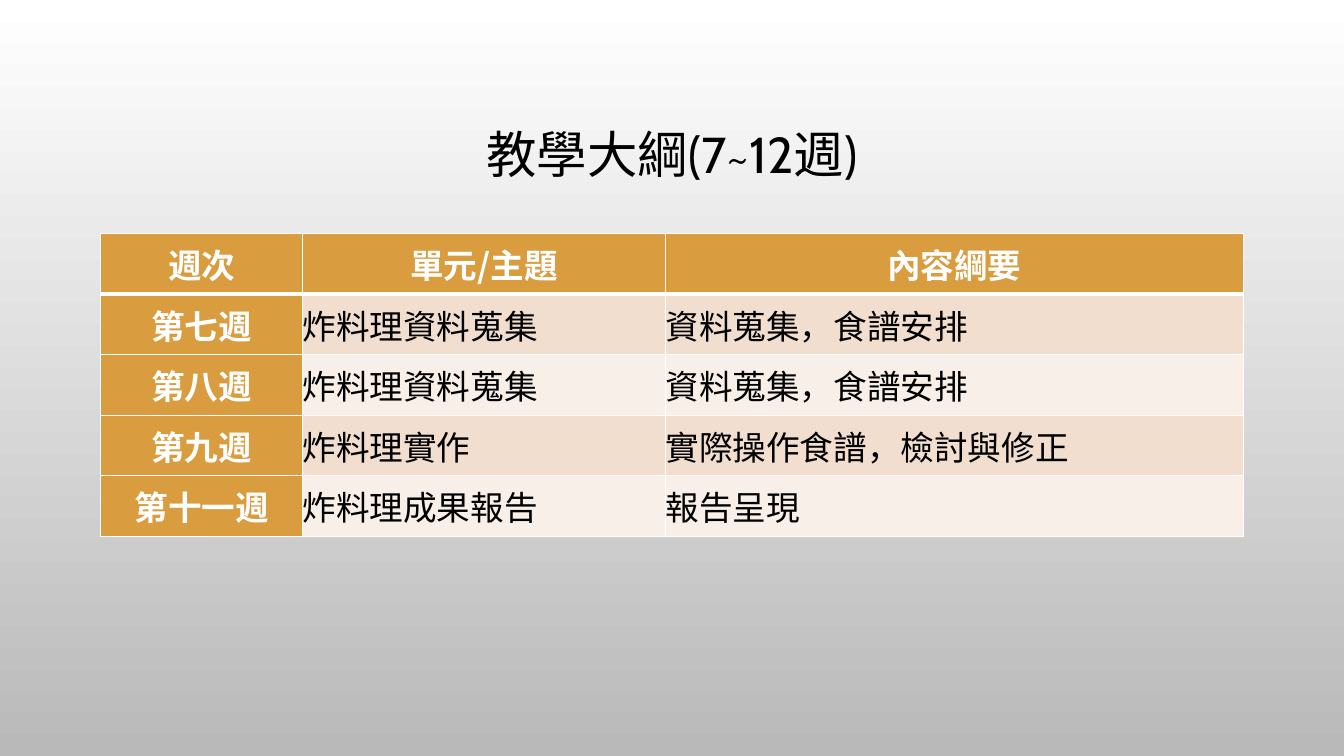
from dataclasses import dataclass

from lxml.etree import SubElement
from pptx import Presentation
from pptx.dml.color import RGBColor
from pptx.enum.text import MSO_ANCHOR as Anchor, PP_ALIGN as Align
from pptx.oxml.ns import qn
from pptx.util import Inches, Pt


@dataclass(frozen=True)
class Theme:
    title_font: str = "Cabin"
    table_font: str = "Noto Sans CJK SC"
    title_size: int = 36
    table_size: int = 24
    black: str = "000000"
    white: str = "FFFFFF"
    background_end: str = "B9B9B9"
    accent: str = "D99C3F"
    bands: tuple = ("F1DECF", "F8EFE8")
    thin_line: int = 1
    header_line: int = 3


class SlideBuilder:
    def __init__(self, deck, theme):
        self.theme = theme
        self.page = deck.slides.add_slide(deck.slide_layouts[6])

    def background(self):
        fill = self.page.background.fill
        fill.gradient()
        fill.gradient_angle = 270
        colors = (self.theme.white, self.theme.background_end)
        for stop, color in zip(fill.gradient_stops, colors):
            stop.color.rgb = RGBColor.from_string(color)

    def set_text(self, frame, text, font, size, color, bold=False, align=Align.CENTER):
        para = frame.paragraphs[0]
        para.text = text
        para.alignment = align
        para.font.size = Pt(size)
        para.font.bold = bold
        para.font.name = font
        para.font.color.rgb = RGBColor.from_string(color)
        # East Asian characters share one typeface
        defaults = para._p.pPr.find(qn("a:defRPr"))
        SubElement(defaults, qn("a:ea"), typeface=self.theme.table_font)
        return para

    def title(self, text, left, top, width, height):
        box = self.page.shapes.add_textbox(
            Inches(left), Inches(top), Inches(width), Inches(height))
        frame = box.text_frame
        frame.word_wrap = True
        frame.vertical_anchor = Anchor.MIDDLE
        para = self.set_text(frame, text, self.theme.title_font,
                             self.theme.title_size, self.theme.black)
        para.line_spacing = 0.9

    def borders(self, cell, row):
        widths = {side: self.theme.thin_line for side in "LRTB"}
        if row < 2:
            widths["B" if row == 0 else "T"] = self.theme.header_line
        properties = cell._tc.get_or_add_tcPr()
        for side, width in widths.items():
            line = SubElement(properties, qn(f"a:ln{side}"), w=str(Pt(width)))
            fill = SubElement(line, qn("a:solidFill"))
            SubElement(fill, qn("a:srgbClr"), val=self.theme.white)

    def cell(self, cell, text, row, column):
        theme = self.theme
        heading = row == 0 or column == 0
        cell.margin_left = cell.margin_right = 0
        cell.margin_top = cell.margin_bottom = 0
        cell.vertical_anchor = Anchor.MIDDLE
        self.borders(cell, row)
        cell.fill.solid()
        color = theme.accent if heading else theme.bands[(row - 1) % 2]
        cell.fill.fore_color.rgb = RGBColor.from_string(color)
        self.set_text(cell.text_frame, text, theme.table_font, theme.table_size,
                      theme.white if heading else theme.black, heading,
                      Align.CENTER if heading else Align.LEFT)

    def table(self, rows, left, top, column_widths, row_height):
        table = self.page.shapes.add_table(
            len(rows), len(column_widths), Inches(left), Inches(top),
            Inches(sum(column_widths)), Inches(row_height * len(rows))).table
        for column, width in zip(table.columns, column_widths):
            column.width = Inches(width)
        for row, texts in enumerate(rows):
            table.rows[row].height = Inches(row_height)
            for column, text in enumerate(texts):
                self.cell(table.cell(row, column), text, row, column)


SYLLABUS = [
    ("週次", "單元/主題", "內容綱要"),
    ("第七週", "炸料理資料蒐集", "資料蒐集，食譜安排"),
    ("第八週", "炸料理資料蒐集", "資料蒐集，食譜安排"),
    ("第九週", "炸料理實作", "實際操作食譜，檢討與修正"),
    ("第十一週", "炸料理成果報告", "報告呈現"),
]


def main():
    deck = Presentation()
    deck.slide_width, deck.slide_height = Inches(13.33), Inches(7.5)
    builder = SlideBuilder(deck, Theme())

    # Background and title
    builder.background()
    builder.title("教學大綱(7~12週)", 1, 0.68, 11.33, 1.75)

    # Weekly syllabus
    builder.table(SYLLABUS, 1, 2.32, (2, 3.6, 5.73), 0.6)

    deck.save("out.pptx")


if __name__ == "__main__":
    main()
